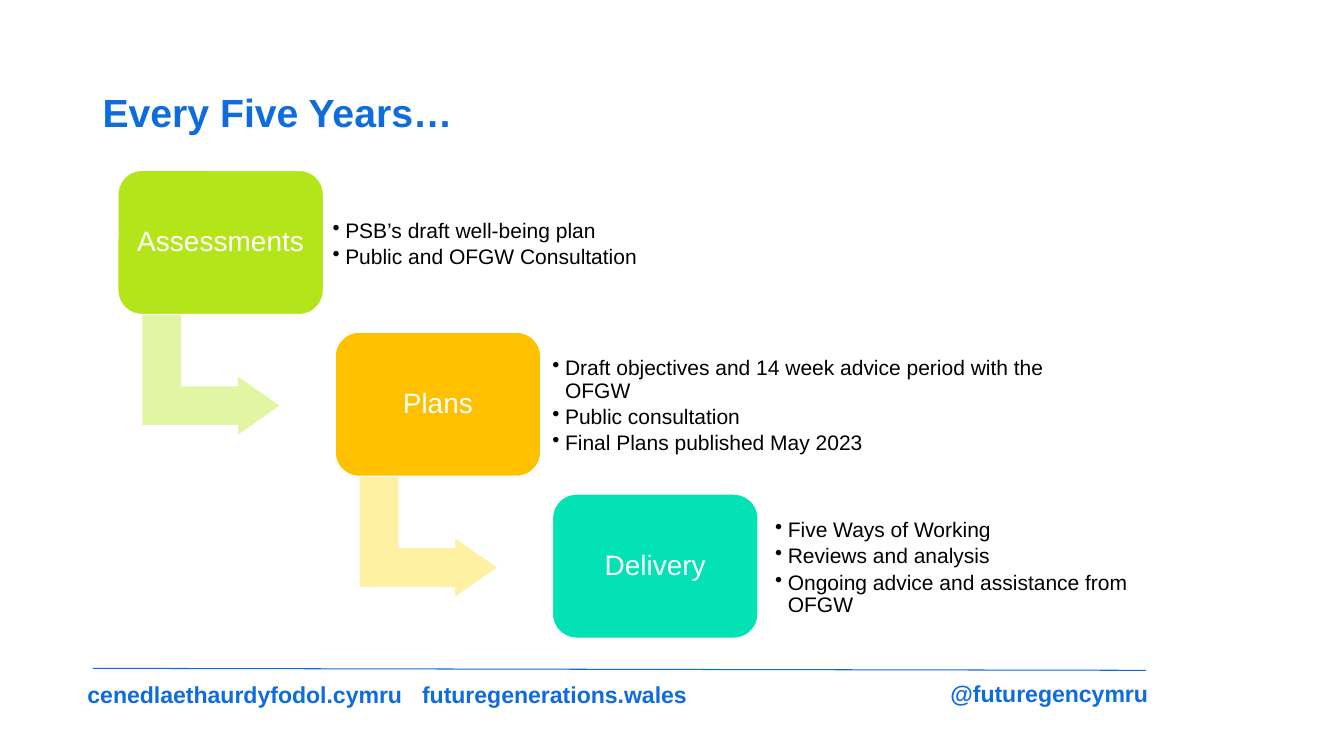
import pptx
import pptx.util
import pptx.dml.color
import pptx.enum.shapes
import pptx.enum.text
import pptx.oxml.ns
import lxml.etree

Pt = pptx.util.Pt
RGB = pptx.dml.color.RGBColor
SHAPE = pptx.enum.shapes.MSO_SHAPE
ALIGN = pptx.enum.text.PP_ALIGN
ANCHOR = pptx.enum.text.MSO_ANCHOR
qn = pptx.oxml.ns.qn

BLUE = RGB(0x0E, 0x6C, 0xDD)
WHITE = RGB(0xFF, 0xFF, 0xFF)
BLACK = RGB(0x00, 0x00, 0x00)
LIME, PALE_LIME = RGB(0xB4, 0xE5, 0x1A), RGB(0xE1, 0xF5, 0xA3)
AMBER, PALE_AMBER = RGB(0xFF, 0xC0, 0x00), RGB(0xFF, 0xF1, 0xA2)
TEAL = RGB(0x02, 0xE2, 0xB5)


class StepSlide:
    font = "Arial"
    line_spacing = 0.9

    def __init__(self, slide):
        self.slide = slide

    def fill_frame(self, frame, lines, size, color, bold=False, align=ALIGN.LEFT,
                   anchor=ANCHOR.MIDDLE, inset=(7.2, 3.6), bullet=False, tab=None):
        side, top = map(Pt, inset)
        frame_format = {"word_wrap": True, "vertical_anchor": anchor,
                        "margin_left": side, "margin_right": side,
                        "margin_top": top, "margin_bottom": top}
        for name, value in frame_format.items():
            setattr(frame, name, value)
        for number, line in enumerate(lines):
            paragraph = frame.paragraphs[0] if number == 0 else frame.add_paragraph()
            properties = paragraph._p.get_or_add_pPr()
            if bullet:
                properties.set("marL", str(Pt(9)))
                properties.set("indent", str(Pt(-9)))
                lxml.etree.SubElement(properties, qn("a:buChar")).set("char", "•")
                paragraph.space_after = Pt(2.6)
            if tab:
                tabs = lxml.etree.SubElement(properties, qn("a:tabLst"))
                stop = lxml.etree.SubElement(tabs, qn("a:tab"))
                stop.set("pos", str(Pt(tab)))
                stop.set("algn", "l")
            paragraph.alignment = align
            paragraph.line_spacing = self.line_spacing
            run = paragraph.add_run()
            run.text = line
            run_format = {"name": self.font, "size": Pt(size), "bold": bold}
            for name, value in run_format.items():
                setattr(run.font, name, value)
            run.font.color.rgb = color

    def text(self, box, lines, size, color, **style):
        frame = self.slide.shapes.add_textbox(*map(Pt, box)).text_frame
        self.fill_frame(frame, lines, size, color, **style)

    def shape(self, kind, box, fill, adjustments):
        shape = self.slide.shapes.add_shape(kind, *map(Pt, box))
        shape.shadow.inherit = False
        shape.fill.solid()
        shape.fill.fore_color.rgb = fill
        shape.line.color.rgb = WHITE
        shape.line.width = Pt(1)
        for number, value in enumerate(adjustments):
            shape.adjustments[number] = value
        return shape

    def card(self, box, label, fill):
        card = self.shape(SHAPE.ROUNDED_RECTANGLE, box, fill, [0.167])
        self.fill_frame(card.text_frame, [label], 20, WHITE, align=ALIGN.CENTER,
                        inset=(3.6, 3.6))

    def arrow(self, box, fill):
        self.shape(SHAPE.BENT_UP_ARROW, box, fill, [0.328, 0.25, 0.358]).rotation = 90

    def rule(self, start, end):
        rule = self.slide.shapes.add_connector(
            pptx.enum.shapes.MSO_CONNECTOR.STRAIGHT, *map(Pt, start + end))
        rule.line.color.rgb = BLUE
        rule.line.width = Pt(0.75)
        lxml.etree.SubElement(rule._element.spPr, qn("a:effectLst"))


def main():
    deck = pptx.Presentation()
    deck.slide_width, deck.slide_height = Pt(960), Pt(540)
    page = StepSlide(deck.slides.add_slide(deck.slide_layouts[6]))

    # Footer
    page.rule((66.2, 477.4), (818.6, 478.8))
    page.text((55.4, 484.6, 600, 43), ["cenedlaethaurdyfodol.cymru\tfuturegenerations.wales"],
              16.5, BLUE, bold=True, anchor=ANCHOR.TOP, tab=239)
    page.text((671.8, 482, 288, 29), ["@futuregencymru"], 16.5, BLUE, bold=True)

    # Title
    page.text((66.2, 56.9, 828, 50.4), ["Every Five Years…"], 28, BLUE, bold=True)

    # Steps: label, card fill, arrow fill, left and width of details, details
    steps = [
        ("Assessments", LIME, PALE_LIME, 231.8, 245.5,
         ["PSB’s draft well-being plan", "Public and OFGW Consultation"]),
        ("Plans", AMBER, PALE_AMBER, 388.8, 363.6,
         ["Draft objectives and 14 week advice period with the OFGW",
          "Public consultation", "Final Plans published May 2023"]),
        ("Delivery", TEAL, None, 547.9, 281.5,
         ["Five Ways of Working", "Reviews and analysis",
          "Ongoing advice and assistance from OFGW"]),
    ]
    for number, (label, fill, arrow_fill, left, width, details) in enumerate(steps):
        across, down = 155.2 * number, 115.6 * number
        if arrow_fill:
            page.arrow((107.4 + across, 218.3 + down, 87.1, 99.4), arrow_fill)
        page.card((84.2 + across, 121.7 + down, 146.9, 103), label, fill)
        page.text((left, 133 + down, width, 83.5), details, 15, BLACK,
                  inset=(5.8, 5.8), bullet=True)

    deck.save("out.pptx")


if __name__ == "__main__":
    main()
